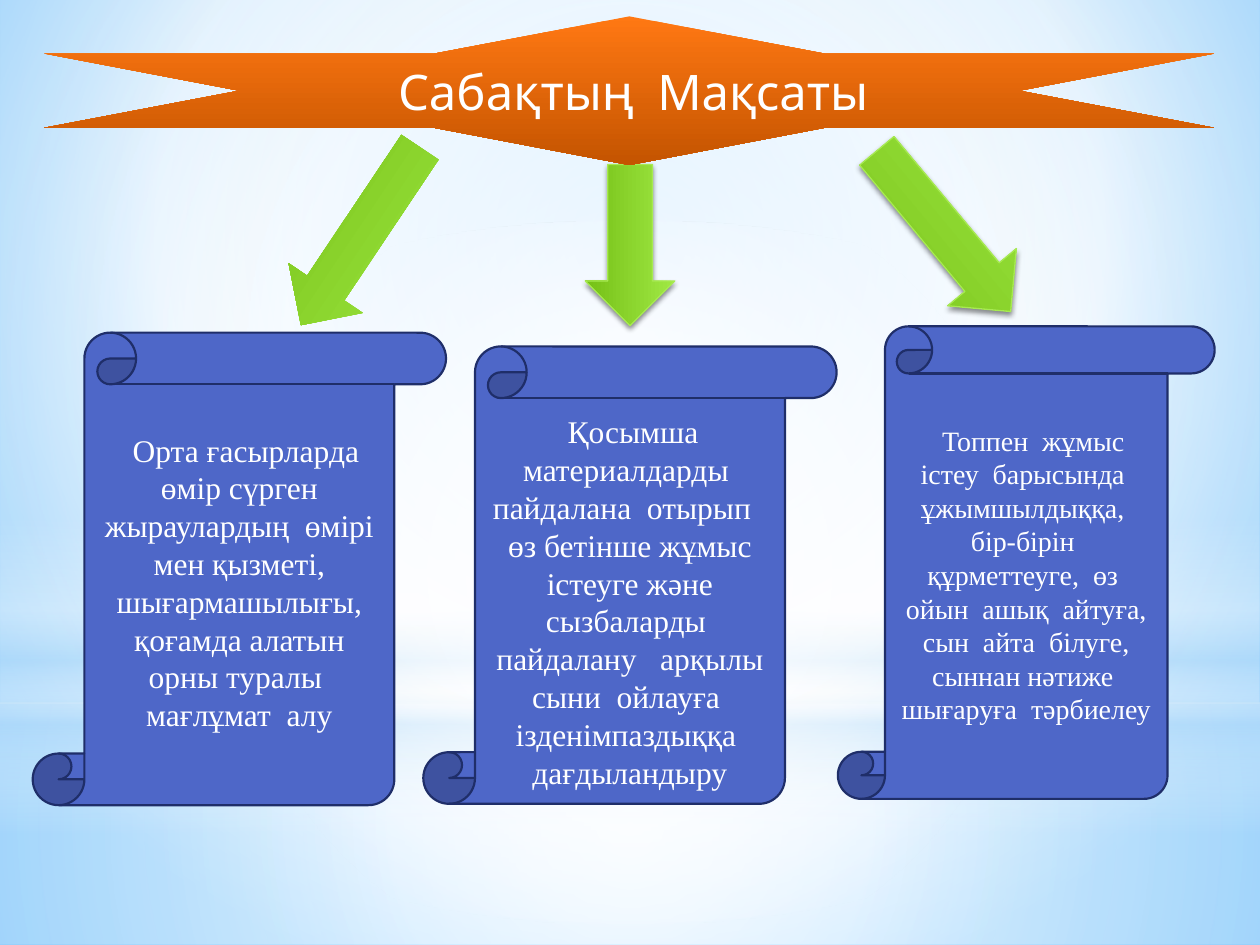
"""Build a lesson-goals slide: a star banner, three arrows and three scrolls."""
import lxml.etree
import pptx
import pptx.dml.color
import pptx.enum.shapes
import pptx.enum.text
import pptx.oxml
import pptx.oxml.ns
import pptx.util

Inches = pptx.util.Inches
Pt = pptx.util.Pt
RGBColor = pptx.dml.color.RGBColor
SHAPE = pptx.enum.shapes.MSO_SHAPE
qn = pptx.oxml.ns.qn

WHITE = RGBColor(0xFF, 0xFF, 0xFF)
SKY = RGBColor(0x9E, 0xD5, 0xFF)
AZURE = RGBColor(0x5B, 0xB9, 0xFF)
MIST = RGBColor(0xB4, 0xDC, 0xFA)
LIME = RGBColor(0xA0, 0xE8, 0x44)
GREEN = RGBColor(0x75, 0xC0, 0x16)
EDGE_GREEN = RGBColor(0xA7, 0xEA, 0x52)
ORANGE = RGBColor(0xFF, 0x78, 0x13)
RUST = RGBColor(0xC4, 0x54, 0x00)
BLUE = RGBColor(0x4E, 0x67, 0xC8)
NAVY = RGBColor(0x1F, 0x2E, 0x69)
BLACK = RGBColor(0, 0, 0)

CENTER = (50, 50, 50, 50)
HAZE = [
    ((0, 5.58, 10, 1.92), SHAPE.RECTANGLE,
     [(0, WHITE, 91), (37, WHITE, 76), (100, MIST, 79)], CENTER),
    ((0, 0, 10, 5.58), SHAPE.RECTANGLE,
     [(0, WHITE, 89), (48, WHITE, 62), (100, MIST, 79)], CENTER),
    ((0, 4.12, 10, 2.5), SHAPE.RECTANGLE,
     [(0, WHITE, 0), (29, WHITE, 30), (45, MIST, 40),
      (55, WHITE, 26), (65, MIST, 60), (100, WHITE, 0)], None),
    ((0, 1.75, 10, 5.58), SHAPE.OVAL,
     [(0, WHITE, 100), (56, WHITE, 0)], CENTER),
]
ARROWS = [
    ((2.01, 1.52, 1.7, 0.71), 123.8, False),
    ((6.66, 1.48, 1.66, 0.71), 50.2, True),
    ((4.36, 1.59, 1.28, 0.71), 90, True),
]
SCROLLS = [
    ((3.36, 2.75, 3.28, 3.63), 18, 3.5, 0.26,
     "Қосымша материалдарды  пайдалана  отырып   өз бетінше жұмыс істеуге және "
     "сызбаларды  пайдалану   арқылы сыни  ойлауға  ізденімпаздыққа  дағдыландыру"),
    ((6.65, 2.59, 2.99, 3.75), 16, 12, 0.05,
     "Топпен  жұмыс  істеу  барысында  ұжымшылдыққа,  бір-бірін  құрметтеуге,  өз  "
     "ойын  ашық  айтуға, сын  айта  білуге, сыннан нәтиже  шығаруға  тәрбиелеу"),
    ((0.26, 2.64, 3.28, 3.75), 18, 7.5, 0.05,
     "Орта ғасырларда өмір сүрген жыраулардың  өмірі мен қызметі, шығармашылығы, "
     "қоғамда алатын орны туралы  мағлұмат  алу"),
]


class SlideBuilder:
    """Hold the style and the current slide."""

    title_font = "Karla"
    body_font = "Times New Roman"

    def __init__(self, prs):
        self.s = prs.slides.add_slide(prs.slide_layouts[5])

    def gradient(self, fill, parent, stops, focus=None):
        fill.solid()
        grad = pptx.oxml.parse_xml(
            f'<a:gradFill {pptx.oxml.ns.nsdecls("a")} rotWithShape="1"><a:gsLst/></a:gradFill>')
        for pos, color, alpha in stops:
            gs = lxml.etree.SubElement(grad[0], qn("a:gs"), pos=str(pos * 1000))
            clr = lxml.etree.SubElement(gs, qn("a:srgbClr"), val=str(color))
            if alpha < 100:
                lxml.etree.SubElement(clr, qn("a:alpha"), val=str(alpha * 1000))
        if focus:
            way = lxml.etree.SubElement(grad, qn("a:path"), path="circle")
            sides = {k: str(v * 1000) for k, v in zip("ltrb", focus)}
            lxml.etree.SubElement(way, qn("a:fillToRect"), **sides)
        else:
            lxml.etree.SubElement(grad, qn("a:lin"), ang="5400000", scaled="0")
        solid = parent.find(qn("a:solidFill"))
        parent.replace(solid, grad)

    def background(self, stops, focus):
        fill = self.s.background.fill
        fill.solid()
        self.gradient(fill, self.s.element.find(".//" + qn("p:bgPr")), stops, focus)

    def shape(self, kind, box, line=None, width=0.75):
        sp = self.s.shapes.add_shape(kind, *map(Inches, box))
        sp.shadow.inherit = False
        if line is None:
            sp.line.fill.background()
        else:
            sp.line.color.rgb = line
            sp.line.width = Pt(width)
        return sp

    def gradient_shape(self, kind, box, stops, focus=None, line=None):
        sp = self.shape(kind, box, line)
        self.gradient(sp.fill, sp.element.spPr, stops, focus)
        return sp

    def arrow(self, box, angle, raised):
        sp = self.gradient_shape(SHAPE.RIGHT_ARROW, box, [(0, LIME, 100), (100, GREEN, 100)],
                                 line=EDGE_GREEN if raised else None)
        sp.rotation = angle
        if raised:
            effects = sp.element.spPr.find(qn("a:effectLst"))
            shadow = lxml.etree.SubElement(
                effects, qn("a:outerShdw"), blurRad=str(Pt(3.1)), dist=str(Pt(1.8)),
                dir="5400000", rotWithShape="0")
            clr = lxml.etree.SubElement(shadow, qn("a:srgbClr"), val=str(BLACK))
            lxml.etree.SubElement(clr, qn("a:alpha"), val="45000")

    def text(self, sp, text, font, size, indent=0):
        tf = sp.text_frame
        tf.word_wrap = True
        tf.vertical_anchor = pptx.enum.text.MSO_ANCHOR.MIDDLE
        p = tf.paragraphs[0]
        p.text = text
        p.alignment = pptx.enum.text.PP_ALIGN.CENTER
        if indent:
            p._p.get_or_add_pPr().set("indent", str(Pt(indent)))
        p.font.name = font
        p.font.size = Pt(size)
        p.font.color.rgb = WHITE

    def scroll(self, box, size, indent, top, text):
        sp = self.shape(SHAPE.VERTICAL_SCROLL, box, NAVY, 1.25)
        sp.fill.solid()
        sp.fill.fore_color.rgb = BLUE
        sp.text_frame.margin_top = Inches(top)
        self.text(sp, text, self.body_font, size, indent)

    def banner(self, box, text):
        star = self.gradient_shape(SHAPE.STAR_6_POINT, box, [(0, ORANGE, 100), (100, RUST, 100)])
        title = self.s.shapes.title
        title.left, title.top = star.left + Inches(0.03), star.top
        title.width, title.height = star.width, star.height
        self.text(title, text, self.title_font, 28)
        star.element.addnext(title.element)


def main():
    prs = pptx.Presentation()
    prs.slide_width, prs.slide_height = Inches(10), Inches(7.5)
    b = SlideBuilder(prs)
    b.background([(0, SKY, 100), (60, WHITE, 100), (100, AZURE, 100)], (20, 10, 20, 60))
    for box, kind, stops, focus in HAZE:
        b.gradient_shape(kind, box, stops, focus)
    for arrow in ARROWS:
        b.arrow(*arrow)
    for scroll in SCROLLS:
        b.scroll(*scroll)
    b.banner((0.35, 0.13, 9.29, 1.18), "Сабақтың  Мақсаты")
    prs.save("out.pptx")


if __name__ == "__main__":
    main()
